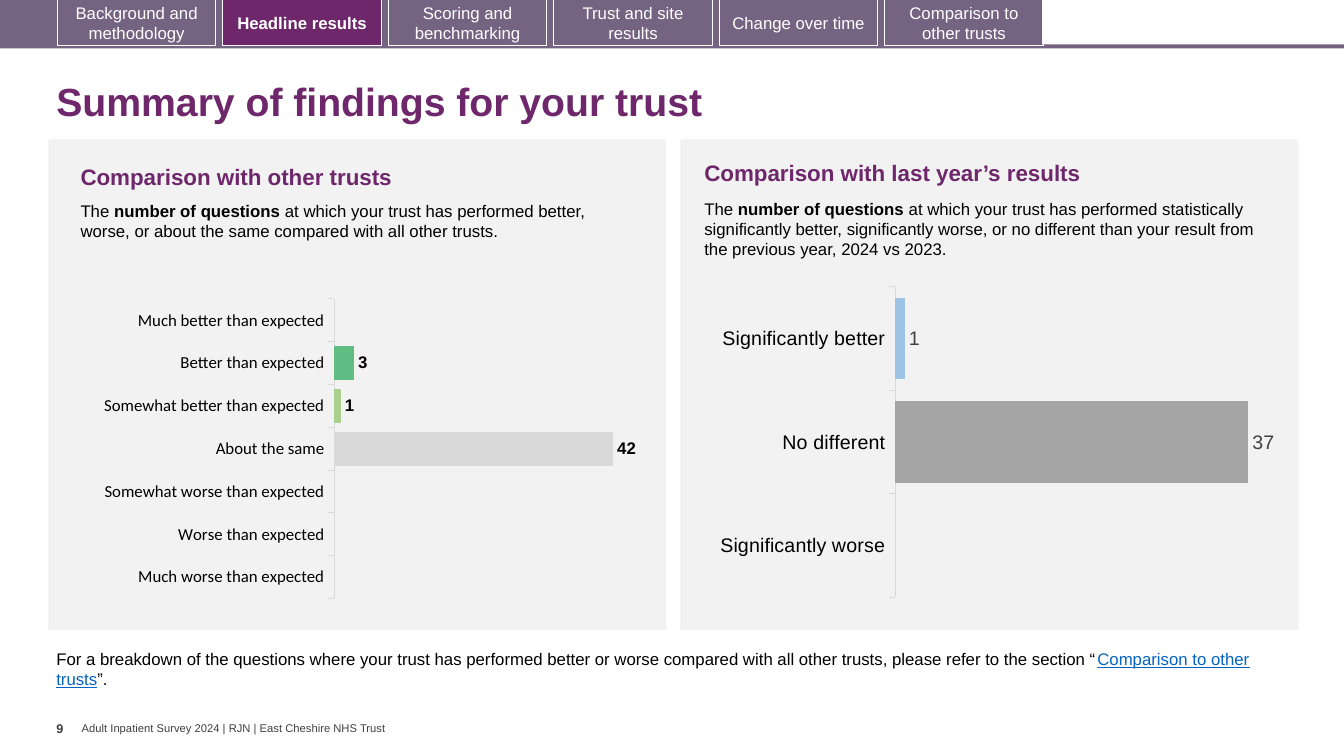
"""Build the survey slide that summarises the findings for one trust."""
from dataclasses import dataclass

from lxml import etree
from pptx import Presentation
from pptx.chart.data import CategoryChartData
from pptx.dml.color import RGBColor
from pptx.enum.chart import XL_CHART_TYPE, XL_LABEL_POSITION, XL_TICK_MARK
from pptx.enum.shapes import MSO_SHAPE
from pptx.enum.text import MSO_ANCHOR, PP_ALIGN
from pptx.oxml.ns import qn
from pptx.util import Cm, Pt

BAR = XL_CHART_TYPE.BAR_CLUSTERED
OUTSIDE_END = XL_LABEL_POSITION.OUTSIDE_END
TICK_OUT, TICK_NONE = XL_TICK_MARK.OUTSIDE, XL_TICK_MARK.NONE
RECTANGLE = MSO_SHAPE.RECTANGLE
LEFT, CENTER = PP_ALIGN.LEFT, PP_ALIGN.CENTER
TOP, MIDDLE = MSO_ANCHOR.TOP, MSO_ANCHOR.MIDDLE


@dataclass(frozen=True)
class Theme:
    """Colours, fonts and type sizes of the slide."""
    accent: str = "6D276A"
    band: str = "756382"
    panel: str = "F2F2F2"
    white: str = "FFFFFF"
    ink: str = "000000"
    muted: str = "404040"
    link: str = "0563C1"
    axis: str = "D9D9D9"
    series: str = "4472C4"
    font: str = "Arial"
    chart_font: str = "Calibri"
    title: int = 28
    heading: int = 16
    large: int = 14
    body: int = 12
    page: int = 9
    footer: int = 8


THEME = Theme()

TITLE = "Summary of findings for your trust"
TABS = ["Background and methodology", "Headline results", "Scoring and benchmarking",
        "Trust and site results", "Change over time", "Comparison to other trusts"]
CURRENT_TAB = "Headline results"
PANELS = [
    {
        "left": 1.22,
        "heading": ("Comparison with other trusts", (1.78, 3.99, 14.02, 0.94)),
        "intro": ([("The ", {}), ("number of questions ", {"bold": True}),
                   ("at which your trust has performed better, worse, or about the same "
                    "compared with all other trusts.", {})], (1.78, 4.93, 13.44, 1.8)),
        "results": [("Much better than expected", None, "419999"),
                    ("Better than expected", 3, "5FBD83"),
                    ("Somewhat better than expected", 1, "A9D18E"),
                    ("About the same", 42, "D9D9D9"),
                    ("Somewhat worse than expected", None, "FFD966"),
                    ("Worse than expected", None, "F1BE48"),
                    ("Much worse than expected", None, "E87722")],
        "chart": {"box": (1.04, 6.91, 15.82, 8.66), "plot": (0.467, 0.072, 0.476, 0.872),
                  "top_value": 45, "size": THEME.body, "font": THEME.chart_font,
                  "label_color": THEME.ink, "label_bold": True},
    },
    {
        "left": 17.15,
        "heading": ("Comparison with last year’s results", (17.5, 3.89, 13.92, 0.94)),
        "intro": ([("The ", {}), ("number of questions ", {"bold": True}),
                   ("at which your trust has performed statistically significantly better, "
                    "significantly worse, or no different than your result from the previous "
                    "year, 2024 vs 2023.", {})], (17.5, 4.88, 14.58, 1.8)),
        "results": [("Significantly better", 1, "9DC3E6"),
                    ("No different", 37, "A5A5A5"),
                    ("Significantly worse", None, "7030A0")],
        "chart": {"box": (16.87, 6.93, 15.82, 8.61), "plot": (0.36, 0.035, 0.608, 0.909),
                  "top_value": 40, "size": THEME.large, "font": THEME.font,
                  "label_color": THEME.muted, "label_bold": False},
    },
]
NOTE = [("For a breakdown of the questions where your trust has performed better or worse "
         "compared with all other trusts, please refer to the section “", {}),
        ("Comparison to other trusts", {"color": THEME.link, "underline": True}),
        ("”.", {})]
PAGE = "9"
FOOTER = "Adult Inpatient Survey 2024 | RJN | East Cheshire NHS Trust"


def rgb(color):
    """Turn a hex string into a colour."""
    return RGBColor.from_string(color)


def cm_box(box):
    """Turn left, top, width and height in centimetres into lengths."""
    return [Cm(length) for length in box]


def style_font(font, size, color, name=THEME.font, bold=False, underline=False):
    """Format one font."""
    font.size, font.name = Pt(size), name
    font.bold, font.underline = bold, underline
    font.color.rgb = rgb(color)


def write(shape, text, size=THEME.body, color=THEME.ink, bold=False, align=LEFT,
          anchor=TOP, insets=(0.25, 0.13), wrap=True, spacing=None):
    """Put a string, or a list of text and override pairs, into a shape."""
    frame = shape.text_frame
    frame.word_wrap, frame.vertical_anchor = wrap, anchor
    frame.margin_left = frame.margin_right = Cm(insets[0])
    frame.margin_top = frame.margin_bottom = Cm(insets[1])
    paragraph = frame.paragraphs[0]
    paragraph.alignment, paragraph.line_spacing = align, spacing
    for words, override in [(text, {})] if isinstance(text, str) else text:
        run = paragraph.add_run()
        run.text = words
        style_font(run.font, **{"size": size, "color": color, "bold": bold, **override})


def add_text(slide, text, box, **text_format):
    """Add a text box."""
    write(slide.shapes.add_textbox(*cm_box(box)), text, **text_format)


def add_block(slide, box, fill=None, line=None):
    """Add a flat rectangle."""
    block = slide.shapes.add_shape(RECTANGLE, *cm_box(box))
    block.shadow.inherit = False
    if fill:
        block.fill.solid()
        block.fill.fore_color.rgb = rgb(fill)
    else:
        block.fill.background()
    if line:
        block.line.color.rgb = rgb(line)
        block.line.width = Pt(0.75)
    else:
        block.line.fill.background()
    return block


def place_plot(chart, plot):
    """Fix the inner plot area as fractions of the chart."""
    area = chart._chartSpace.chart.plotArea
    for old in area.findall(qn("c:layout")):
        area.remove(old)
    layout = etree.Element(qn("c:layout"))
    manual = etree.SubElement(layout, qn("c:manualLayout"))
    settings = [("layoutTarget", "inner"), ("xMode", "edge"), ("yMode", "edge"),
                *zip("xywh", plot)]
    for tag, value in settings:
        etree.SubElement(manual, qn(f"c:{tag}")).set("val", str(value))
    area.insert(0, layout)


def add_results_chart(slide, results, box, plot, top_value, size, font, label_color, label_bold):
    """Add a bar chart with one colour for each result."""
    names, counts, colors = zip(*results)
    data = CategoryChartData(number_format="0")
    data.categories = names
    data.add_series("Series 1", counts)
    chart = slide.shapes.add_chart(BAR, *cm_box(box), data).chart
    chart.has_legend = chart.has_title = False
    style_font(chart.font, size, THEME.ink, font)
    place_plot(chart, plot)

    categories, values = chart.category_axis, chart.value_axis
    categories.reverse_order = True
    categories.major_tick_mark, categories.minor_tick_mark = TICK_OUT, TICK_NONE
    categories.format.line.color.rgb = rgb(THEME.axis)
    categories.format.line.width = Pt(0.75)
    style_font(categories.tick_labels.font, size, THEME.ink, font)
    values.visible = values.has_major_gridlines = False
    values.minimum_scale, values.maximum_scale = 0, top_value

    bars = chart.plots[0]
    bars.gap_width, bars.vary_by_categories = 27, False
    series = bars.series[0]
    series.format.fill.solid()
    series.format.fill.fore_color.rgb = rgb(THEME.series)
    for index, color in enumerate(colors):
        fill = series.points[index].format.fill
        fill.solid()
        fill.fore_color.rgb = rgb(color)
    labels = series.data_labels
    labels.show_value, labels.position = True, OUTSIDE_END
    labels.number_format, labels.number_format_is_linked = "0", False
    style_font(labels.font, size, label_color, bold=label_bold)


def main():
    """Lay out the slide and save it."""
    deck = Presentation()
    deck.slide_width, deck.slide_height = Cm(33.87), Cm(19.05)
    slide = deck.slides.add_slide(deck.slide_layouts[5])

    add_text(slide, FOOTER, (2.06, 18.19, 15.49, 0.33), size=THEME.footer,
             color=THEME.muted, anchor=MIDDLE, insets=(0, 0))
    add_block(slide, (0, 1.12, 33.87, 0.1), THEME.band)
    add_block(slide, (0, 0, 26.26, 1.19), THEME.band)
    for index, tab in enumerate(TABS):
        current = tab == CURRENT_TAB
        block = add_block(slide, (1.45 + 4.17 * index, -0.03, 3.99, 1.19),
                          THEME.accent if current else None, THEME.white)
        write(block, tab, color=THEME.white, bold=current, align=CENTER, anchor=MIDDLE)

    title = slide.shapes.title
    title.left, title.top, title.width, title.height = cm_box((1.17, 1.7, 31.72, 1.83))
    write(title, TITLE, size=THEME.title, color=THEME.accent, bold=True,
          anchor=MIDDLE, spacing=0.9)

    for panel in PANELS:
        add_block(slide, (panel["left"], 3.51, 15.57, 12.37), THEME.panel)
        add_text(slide, *panel["heading"], size=THEME.heading, color=THEME.accent, bold=True)
        add_text(slide, *panel["intro"])
        add_results_chart(slide, panel["results"], **panel["chart"])

    add_text(slide, NOTE, (1.17, 16.21, 31.01, 1.27))
    add_text(slide, PAGE, (1.42, 18.03, 0.64, 1.02), size=THEME.page, color=THEME.muted,
             bold=True, insets=(0, 0.13), wrap=False)
    deck.save("out.pptx")


if __name__ == "__main__":
    main()
